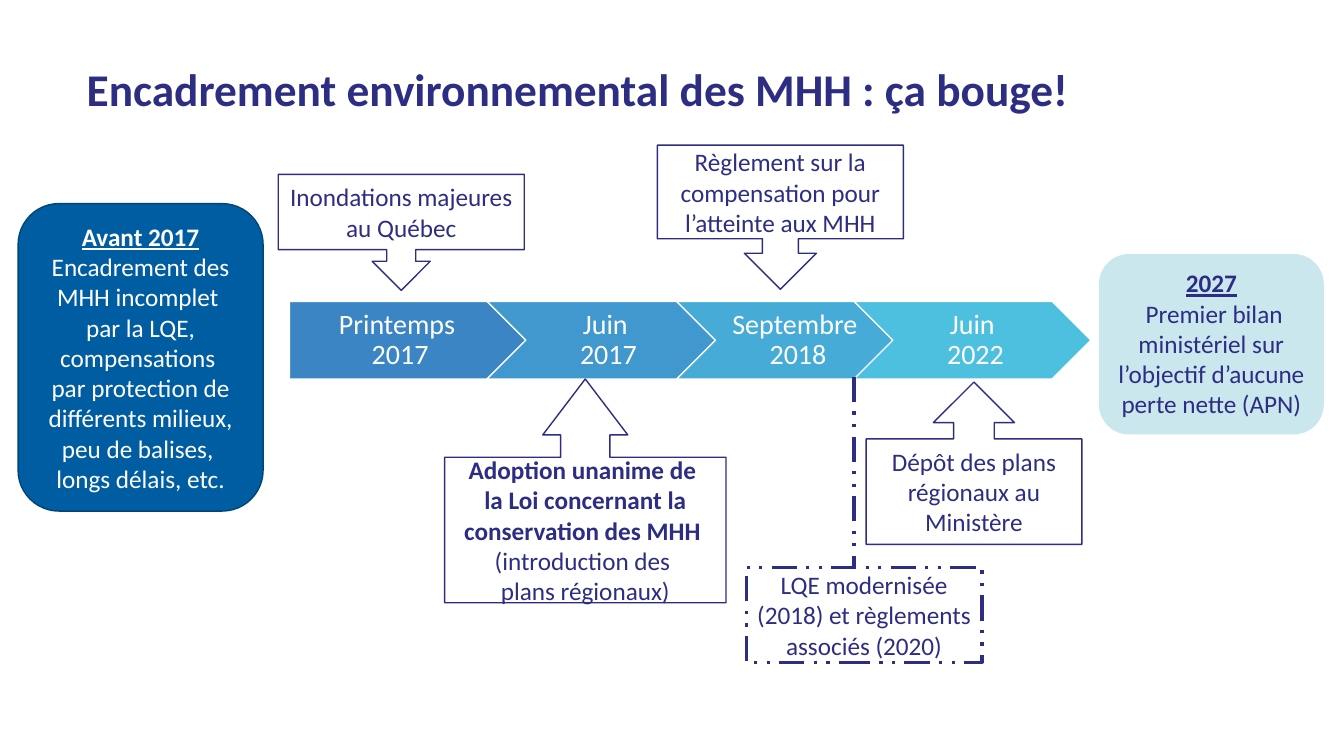
"""Build the timeline slide on the environmental framework for wetlands."""
from dataclasses import dataclass

from lxml.etree import SubElement
from pptx import Presentation
from pptx.dml.color import RGBColor
from pptx.enum.dml import MSO_LINE
from pptx.enum.shapes import MSO_CONNECTOR, MSO_SHAPE as Shape
from pptx.enum.text import MSO_ANCHOR as Anchor, MSO_AUTO_SIZE, PP_ALIGN as Align
from pptx.oxml.ns import qn
from pptx.util import Inches, Pt

NAVY, WHITE = "2D2E83", "FFFFFF"
DASH = MSO_LINE.DASH_DOT_DOT


@dataclass(frozen=True)
class Span:
    text: str
    bold: bool = False
    underline: bool = False


@dataclass(frozen=True)
class Box:
    kind: Shape
    place: tuple[float, float, float, float]
    paras: tuple[tuple[Span, ...], ...]
    fill: str | None = None
    opacity: int = 100
    line: str | None = NAVY
    width: float = 1
    dash: MSO_LINE | None = None
    ink: str = NAVY
    size: float = 18
    spacing: float | None = None
    anchor: Anchor = Anchor.MIDDLE
    insets: tuple[float, float, float, float] = (0.1, 0.05, 0.1, 0.05)
    adjustments: tuple[float, ...] = ()


def plain(text: str) -> tuple[tuple[Span, ...], ...]:
    return ((Span(text),),)


def rgb(value: str) -> RGBColor:
    return RGBColor.from_string(value)


def style_para(para, align: Align, size: float, ink: str, spacing: float | None) -> None:
    para.alignment = align
    para.line_spacing = spacing
    para.font.name = "Calibri"
    para.font.size = Pt(size)
    para.font.color.rgb = rgb(ink)


def style_line(line, colour: str, width: float, dash: MSO_LINE | None) -> None:
    line.color.rgb = rgb(colour)
    line.width = Pt(width)
    if dash is not None:
        line.dash_style = dash


def write_spans(para, spans: tuple[Span, ...]) -> None:
    for span in spans:
        for index, piece in enumerate(span.text.split("\n")):
            if index:
                para.add_line_break()
            run = para.add_run()
            run.text = piece
            run.font.bold = span.bold
            run.font.underline = span.underline


def draw_box(page, box: Box) -> None:
    shape = page.shapes.add_shape(box.kind, *map(Inches, box.place))
    shape.shadow.inherit = False
    for index, value in enumerate(box.adjustments):
        shape.adjustments[index] = value
    if box.fill:
        shape.fill.solid()
        shape.fill.fore_color.rgb = rgb(box.fill)
        if box.opacity < 100:
            colour = shape.element.spPr.find(qn("a:solidFill"))[0]
            SubElement(colour, qn("a:alpha"), val=str(box.opacity * 1000))
    else:
        shape.fill.background()
    if box.line:
        style_line(shape.line, box.line, box.width, box.dash)
    else:
        shape.line.fill.background()
    frame = shape.text_frame
    frame.word_wrap = True
    frame.vertical_anchor = box.anchor
    (frame.margin_left, frame.margin_top,
     frame.margin_right, frame.margin_bottom) = map(Inches, box.insets)
    for index, spans in enumerate(box.paras):
        para = frame.add_paragraph() if index else frame.paragraphs[0]
        style_para(para, Align.CENTER, box.size, box.ink, box.spacing)
        write_spans(para, spans)


def draw_title(page, text: str) -> None:
    title = page.shapes.title
    title.left, title.top, title.width, title.height = map(Inches, (0.76, 0.61, 12.5, 0.6))
    frame = title.text_frame
    frame.auto_size = MSO_AUTO_SIZE.NONE
    frame.word_wrap = True
    frame.vertical_anchor = Anchor.MIDDLE
    para = frame.paragraphs[0]
    para.text = text
    style_para(para, Align.LEFT, 32.4, NAVY, 0.9)
    para.font.bold = True


def draw_link(page, x: float, top: float, bottom: float) -> None:
    link = page.shapes.add_connector(
        MSO_CONNECTOR.STRAIGHT, Inches(x), Inches(top), Inches(x), Inches(bottom))
    style_line(link.line, NAVY, 2.25, DASH)
    SubElement(link.element.spPr, qn("a:effectLst"))


def step(kind: Shape, left: float, fill: str, text: str, insets: tuple) -> Box:
    return Box(kind, (left, 2.99, 2.35, 0.77), plain(text), fill=fill, line=WHITE,
               ink=WHITE, size=20, spacing=0.9, insets=insets)


CHEVRON_INSETS = (0.09, 0.06, 0.03, 0.06)
STEPS = (
    step(Shape.PENTAGON, 2.87, "3B85C4", "Printemps \n2017", (0.04, 0.06, 0, 0.06)),
    step(Shape.CHEVRON, 4.83, "4098CE", "Juin \n2017", CHEVRON_INSETS),
    step(Shape.CHEVRON, 6.71, "46ACD7", "Septembre \n2018", CHEVRON_INSETS),
    step(Shape.CHEVRON, 8.47, "4DC0DF", "Juin \n2022", CHEVRON_INSETS),
)
NOTES = (
    Box(Shape.DOWN_ARROW_CALLOUT, (2.76, 1.73, 2.44, 1.15),
        plain("Inondations majeures au Québec")),
    Box(Shape.UP_ARROW_CALLOUT, (8.59, 3.79, 2.14, 1.61),
        plain("Dépôt des plans régionaux au Ministère")),
    Box(Shape.DOWN_ARROW_CALLOUT, (6.52, 1.44, 2.44, 1.43),
        plain("Règlement sur la compensation pour l’atteinte aux MHH")),
    Box(Shape.ROUNDED_RECTANGLE, (10.9, 2.52, 2.23, 1.79),
        ((Span("2027", bold=True, underline=True),),
         (Span(" Premier bilan ministériel sur l’objectif d’aucune perte nette (APN)"),)),
        fill="97D0DC", opacity=51, line=None, anchor=Anchor.TOP),
    Box(Shape.ROUNDED_RECTANGLE, (0.18, 2.02, 2.43, 3.05),
        ((Span("Avant 2017 ", bold=True, underline=True),
          Span("Encadrement des MHH incomplet \npar la LQE, compensations \n"
               "par protection de différents milieux, peu de balises, \n"
               "longs délais, etc.")),),
        fill="005DA1", line="004577", ink=WHITE, insets=(0, 0.05, 0, 0.05)),
    Box(Shape.UP_ARROW_CALLOUT, (4.41, 3.76, 2.79, 2.22),
        ((Span("Adoption unanime de \nla Loi concernant la conservation des MHH ", bold=True),),
         (Span("(introduction des \nplans régionaux)"),)),
        adjustments=(0.22, 0.19, 0.25, 0.65)),
    Box(Shape.RECTANGLE, (7.4, 5.63, 2.34, 0.94),
        plain("LQE modernisée (2018) et règlements associés (2020)"),
        width=2.25, dash=DASH),
)


def main() -> None:
    deck = Presentation()
    deck.slide_width, deck.slide_height = Inches(13.33), Inches(7.5)
    page = deck.slides.add_slide(deck.slide_layouts.get_by_name("Title Only"))
    draw_title(page, "Encadrement environnemental des MHH : ça bouge!")
    for box in STEPS + NOTES:
        draw_box(page, box)
    draw_link(page, 8.47, 3.74, 5.63)
    deck.save("out.pptx")


if __name__ == "__main__":
    main()
